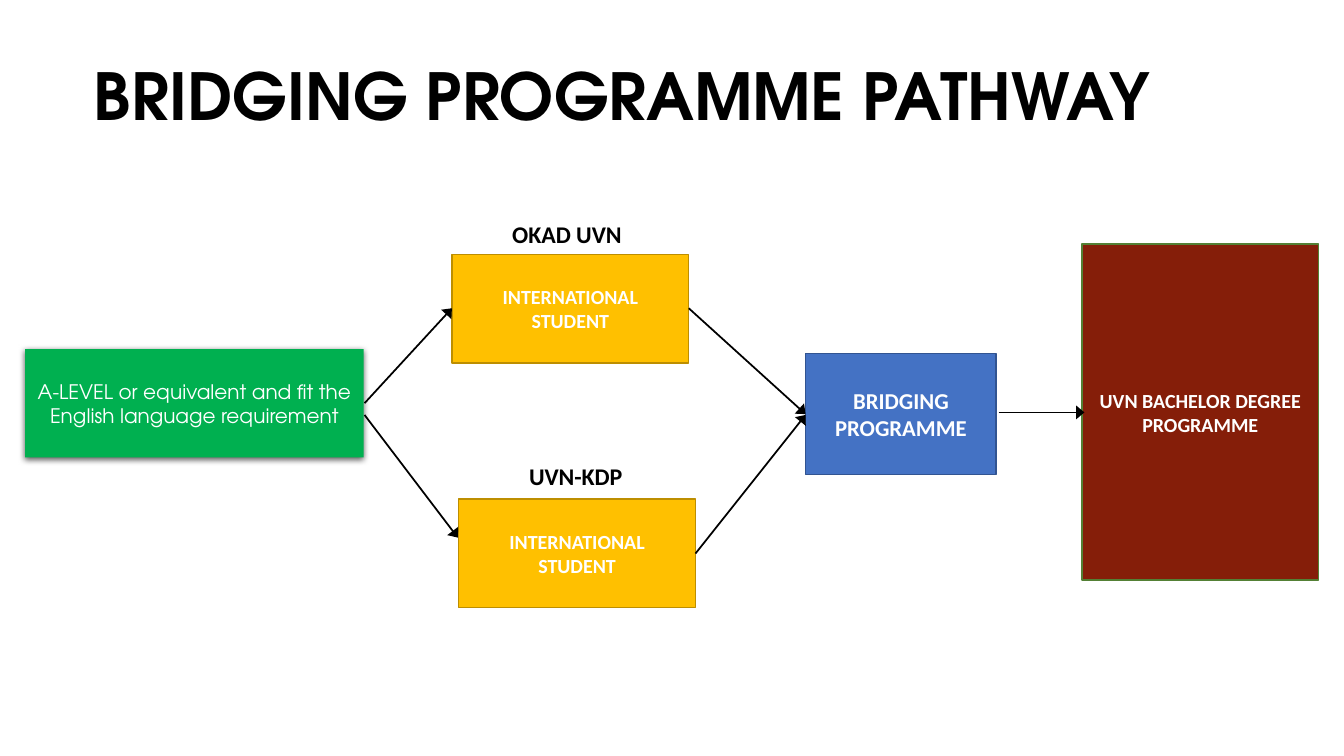
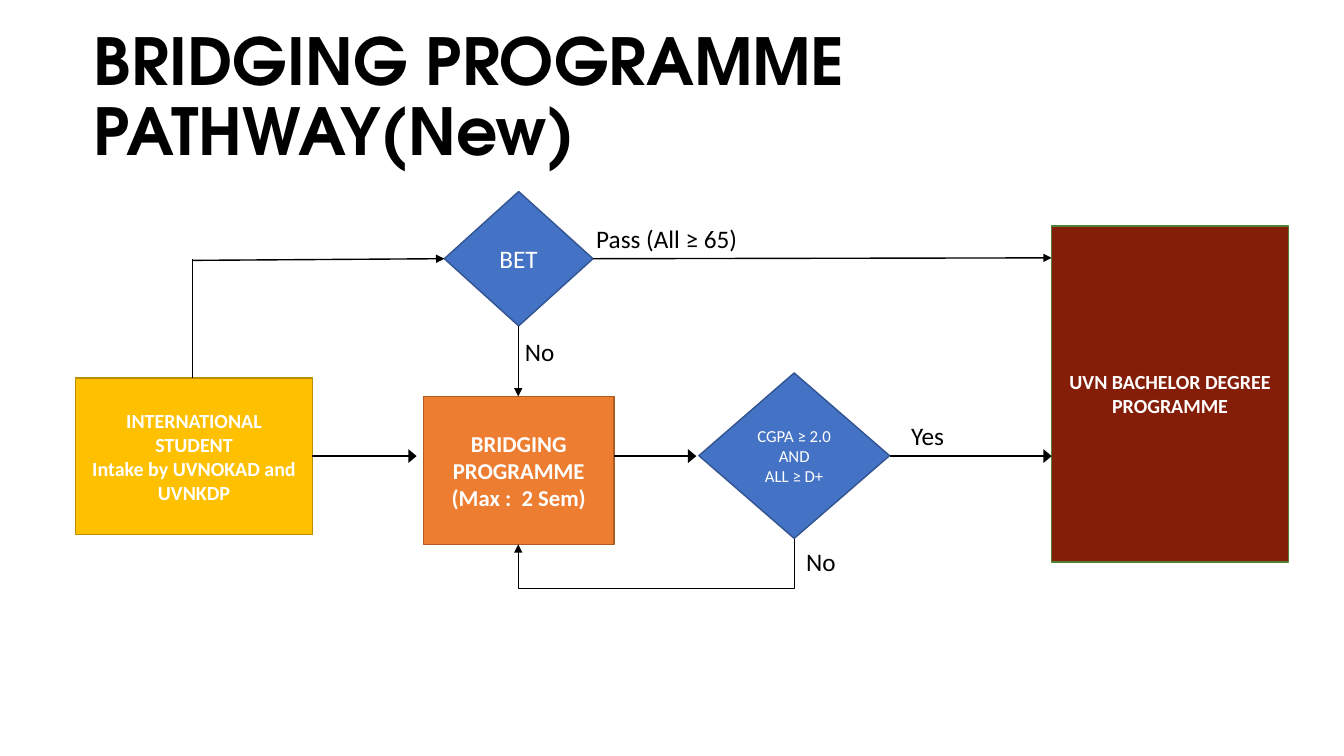
"""Build two slides that chart the bridging programme pathway."""
from dataclasses import dataclass
from typing import Any, Optional

import lxml.etree
import pptx
import pptx.dml.color
import pptx.enum.shapes
import pptx.enum.text
import pptx.oxml.ns
import pptx.util

Pt = pptx.util.Pt
RGBColor = pptx.dml.color.RGBColor
Shape = pptx.enum.shapes.MSO_SHAPE
Connector = pptx.enum.shapes.MSO_CONNECTOR
Align = pptx.enum.text.PP_ALIGN
Anchor = pptx.enum.text.MSO_ANCHOR
qn = pptx.oxml.ns.qn

WIDTH, HEIGHT = pptx.util.Inches(13.333), pptx.util.Inches(7.5)
COLS, ROWS = 160, 90

BLACK = RGBColor(0x00, 0x00, 0x00)
WHITE = RGBColor(0xFF, 0xFF, 0xFF)
GREEN = RGBColor(0x00, 0xB0, 0x50)
GOLD = RGBColor(0xFF, 0xC0, 0x00)
GOLD_EDGE = RGBColor(0xBD, 0x8E, 0x00)
BLUE = RGBColor(0x44, 0x72, 0xC4)
BLUE_EDGE = RGBColor(0x32, 0x54, 0x91)
ORANGE = RGBColor(0xED, 0x7D, 0x31)
ORANGE_EDGE = RGBColor(0xAF, 0x5C, 0x24)
MAROON = RGBColor(0x85, 0x1E, 0x09)
MAROON_EDGE = RGBColor(0x53, 0x80, 0x35)

HEAD_FONT, BODY_FONT = "TeX Gyre Adventor", "Calibri"


@dataclass(frozen=True)
class Style:
    """Fill, outline and type of one kind of box."""
    fill: RGBColor
    edge: Optional[RGBColor]
    size: float
    bold: bool = True
    font: str = BODY_FONT
    form: Any = Shape.RECTANGLE


@dataclass(frozen=True)
class Box:
    """A filled shape placed by column and row."""
    style: Style
    col: float
    row: float
    cols: float
    rows: float
    lines: tuple[str, ...]


@dataclass(frozen=True)
class Label:
    """A caption beside a box or an arrow."""
    col: float
    row: float
    text: str
    size: float = 18
    bold: bool = False


@dataclass(frozen=True)
class Arrow:
    """A straight line from one grid point to another."""
    col1: float
    row1: float
    col2: float
    row2: float
    width: float = 1.25
    head: bool = True


@dataclass(frozen=True)
class Loop(Arrow):
    """An elbow arrow that dips to a lower row and comes back up."""
    low_row: float = 0


@dataclass(frozen=True)
class Page:
    """The content of one slide."""
    title: str
    boxes: tuple[Box, ...]
    arrows: tuple[Arrow, ...]
    labels: tuple[Label, ...]


ENTRY = Style(GREEN, None, 14.3, False, HEAD_FONT)
STUDENT = Style(GOLD, GOLD_EDGE, 14.3)
BRIDGE = Style(BLUE, BLUE_EDGE, 16.2)
BRIDGE_NEW = Style(ORANGE, ORANGE_EDGE, 16.2)
DEGREE = Style(MAROON, MAROON_EDGE, 14.3)
TEST = Style(BLUE, BLUE_EDGE, 18, False, form=Shape.DIAMOND)
GRADES = Style(BLUE, BLUE_EDGE, 12, False, form=Shape.DIAMOND)

STUDENT_TEXT = "INTERNATIONAL STUDENT"
BRIDGE_TEXT = "BRIDGING PROGRAMME"
DEGREE_TEXT = "UVN BACHELOR DEGREE PROGRAMME"

PAGES = (
    Page(
        "BRIDGING PROGRAMME PATHWAY",
        (
            Box(ENTRY, 3, 41.55, 40.3, 12.9,
                ("A-LEVEL or equivalent and fit the English language requirement",)),
            Box(STUDENT, 53.8, 30.3, 28.2, 12.9, (STUDENT_TEXT,)),
            Box(STUDENT, 54.6, 59.4, 28.2, 12.9, (STUDENT_TEXT,)),
            Box(BRIDGE, 95.9, 42.1, 22.7, 14.4, (BRIDGE_TEXT,)),
            Box(DEGREE, 128.8, 29.05, 28.2, 40, (DEGREE_TEXT,)),
        ),
        (
            Arrow(43.4, 48, 53.8, 36.7),
            Arrow(43.4, 49.4, 54.5, 64),
            Arrow(82, 36.7, 95.9, 49.3),
            Arrow(82.8, 65.9, 95.9, 49.4),
            Arrow(118.9, 49.1, 129.1, 49.1),
        ),
        (
            Label(59.8, 25.6, "OKAD UVN", 17.1, True),
            Label(61.8, 54.4, "UVN-KDP", 17.1, True),
        ),
    ),
    Page(
        "BRIDGING PROGRAMME PATHWAY(New)",
        (
            Box(STUDENT, 9, 45, 28.2, 18.6,
                (STUDENT_TEXT, "Intake by UVNOKAD and UVNKDP")),
            Box(BRIDGE_NEW, 50.4, 47.2, 22.7, 17.6, (BRIDGE_TEXT, "(Max :  2 Sem)")),
            Box(DEGREE, 125.2, 26.9, 28.2, 40, (DEGREE_TEXT,)),
            Box(TEST, 52.9, 22.8, 17.7, 16, ("BET",)),
            Box(GRADES, 83.2, 44.4, 22.7, 19.7, ("CGPA ≥ 2.0", "AND", "ALL ≥ D+")),
        ),
        (
            Arrow(37.2, 54.3, 49.6, 54.3),
            Arrow(73.1, 54.3, 82.9, 54.3),
            Arrow(105.9, 54.3, 125.2, 54.3),
            Arrow(22.9, 45, 22.9, 30.8, 0.5, False),
            Arrow(22.9, 31, 52.9, 30.8, 1),
            Arrow(70.6, 30.8, 125.2, 30.7, 1),
            Arrow(61.7, 38.8, 61.7, 47.2, 0.5),
            Loop(94.6, 64.2, 61.7, 64.8, 0.5, low_row=70.1),
        ),
        (
            Label(69.8, 26, "Pass (All ≥ 65)"),
            Label(61.3, 39.5, "No"),
            Label(107.3, 49.4, "Yes"),
            Label(94.8, 64.4, "No"),
        ),
    ),
)


def x(col: float) -> int:
    """Turn columns into a length."""
    return round(WIDTH * col / COLS)


def y(row: float) -> int:
    """Turn rows into a length."""
    return round(HEIGHT * row / ROWS)


def apply(target: Any, values: dict[str, Any]) -> None:
    """Set each named attribute on the target."""
    for name, value in values.items():
        setattr(target, name, value)


def write(sp: Any, lines: tuple[str, ...], frame: dict[str, Any],
          para: dict[str, Any], font: dict[str, Any], color: RGBColor) -> None:
    """Write one paragraph per line."""
    tf = sp.text_frame
    apply(tf, {"word_wrap": True} | frame)
    for i, line in enumerate(lines):
        p = tf.paragraphs[0] if i == 0 else tf.add_paragraph()
        apply(p, para)
        r = p.add_run()
        r.text = line
        apply(r.font, font)
        r.font.color.rgb = color


def add_title(slide: Any, text: str) -> None:
    """Draw the slide heading."""
    sp = slide.shapes.add_textbox(x(10), y(5.25), x(143.9), y(13.1))
    write(sp, (text,), {"vertical_anchor": Anchor.MIDDLE}, {"line_spacing": 0.9},
          {"name": HEAD_FONT, "size": Pt(46.3), "bold": True}, BLACK)


def add_soft_shadow(sp: Any) -> None:
    """Give the shape a soft shadow straight below it."""
    effects = sp._element.spPr.find(qn("a:effectLst"))
    shadow = lxml.etree.SubElement(
        effects, qn("a:outerShdw"), blurRad=str(Pt(4.5)), dist=str(Pt(1.5)),
        dir="5400000", algn="ctr", rotWithShape="0")
    color = lxml.etree.SubElement(shadow, qn("a:srgbClr"), val=str(BLACK))
    lxml.etree.SubElement(color, qn("a:alpha"), val="63000")


def add_box(slide: Any, box: Box) -> None:
    """Draw a filled shape with centred text."""
    style = box.style
    sp = slide.shapes.add_shape(style.form, x(box.col), y(box.row), x(box.cols), y(box.rows))
    sp.shadow.inherit = False
    sp.fill.solid()
    sp.fill.fore_color.rgb = style.fill
    if style.edge is None:
        sp.line.fill.background()
        add_soft_shadow(sp)
    else:
        sp.line.color.rgb = style.edge
        sp.line.width = Pt(1)
    write(sp, box.lines, {"vertical_anchor": Anchor.MIDDLE}, {"alignment": Align.CENTER},
          {"name": style.font, "size": Pt(style.size), "bold": style.bold}, WHITE)


def add_label(slide: Any, label: Label) -> None:
    """Draw a caption."""
    sp = slide.shapes.add_textbox(x(label.col), y(label.row), x(22), y(4.8))
    write(sp, (label.text,), {"vertical_anchor": Anchor.TOP}, {"alignment": Align.LEFT},
          {"name": BODY_FONT, "size": Pt(label.size), "bold": label.bold}, BLACK)


def add_loop(slide: Any, loop: Loop) -> Any:
    """Draw an elbow turned a quarter so that it leaves and returns from below."""
    mid_x, mid_y = x(loop.col1 + loop.col2) // 2, y(loop.row1 + loop.row2) // 2
    half_w, half_h = y(loop.row2 - loop.row1) // 2, x(loop.col1 - loop.col2) // 2
    sp = slide.shapes.add_connector(Connector.ELBOW, mid_x - half_w, mid_y - half_h,
                                    mid_x + half_w, mid_y + half_h)
    spPr = sp._element.spPr
    spPr.find(qn("a:xfrm")).set("rot", "5400000")
    bend = round(100000 * (loop.low_row - loop.row1) / (loop.row2 - loop.row1))
    guides = spPr.find(qn("a:prstGeom")).find(qn("a:avLst"))
    lxml.etree.SubElement(guides, qn("a:gd"), name="adj1", fmla=f"val {bend}")
    return sp


def add_arrow(slide: Any, arrow: Arrow) -> None:
    """Draw a line, with an arrowhead where it has one."""
    if isinstance(arrow, Loop):
        sp = add_loop(slide, arrow)
    else:
        sp = slide.shapes.add_connector(Connector.STRAIGHT, x(arrow.col1), y(arrow.row1),
                                        x(arrow.col2), y(arrow.row2))
    sp.line.color.rgb = BLACK
    sp.line.width = Pt(arrow.width)
    spPr = sp._element.spPr
    if arrow.head:
        lxml.etree.SubElement(spPr.find(qn("a:ln")), qn("a:tailEnd"), type="triangle",
                              w="lg" if arrow.width > 1 else "med")
    lxml.etree.SubElement(spPr, qn("a:effectLst"))


def main() -> None:
    """Build and save the presentation."""
    prs = pptx.Presentation()
    apply(prs, {"slide_width": WIDTH, "slide_height": HEIGHT})
    for page in PAGES:
        slide = prs.slides.add_slide(prs.slide_layouts[6])
        add_title(slide, page.title)
        for draw, items in ((add_box, page.boxes), (add_arrow, page.arrows),
                            (add_label, page.labels)):
            for item in items:
                draw(slide, item)
    prs.save("out.pptx")


if __name__ == "__main__":
    main()
